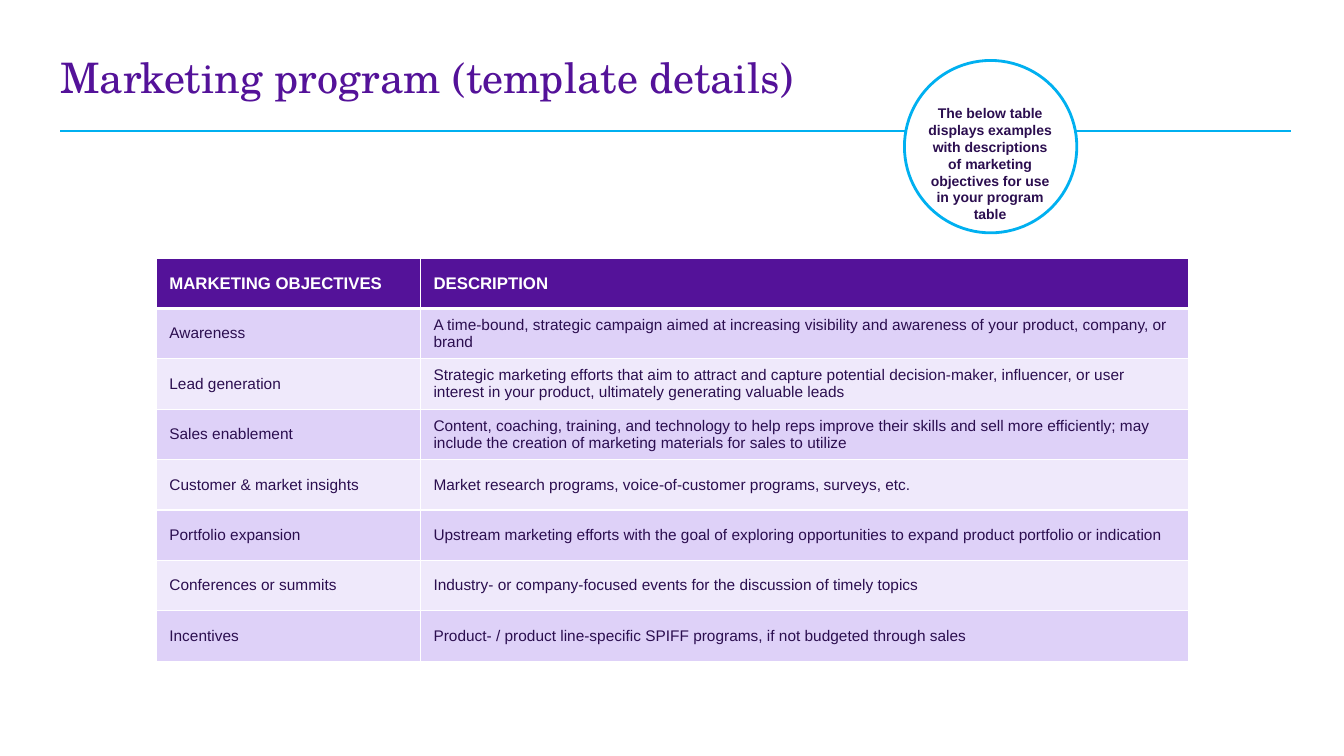
from lxml import etree
from pptx import Presentation
from pptx.dml.color import RGBColor
from pptx.enum.shapes import MSO_CONNECTOR, MSO_SHAPE
from pptx.enum.text import MSO_ANCHOR, PP_ALIGN
from pptx.oxml.ns import qn
from pptx.util import Inches, Pt

STRAIGHT = MSO_CONNECTOR.STRAIGHT
OVAL = MSO_SHAPE.OVAL
TOP, MIDDLE = MSO_ANCHOR.TOP, MSO_ANCHOR.MIDDLE
LEFT, CENTER = PP_ALIGN.LEFT, PP_ALIGN.CENTER

COLORS = {
    "purple": "541299",
    "ink": "2B0E4F",
    "cyan": "00B0F0",
    "band_dark": "DED1F8",
    "band_light": "EFE9FB",
    "white": "FFFFFF",
}
OBJECTIVES = [
    ("MARKETING OBJECTIVES", "DESCRIPTION"),
    ("Awareness",
     "A time-bound, strategic campaign aimed at increasing visibility and "
     "awareness of your product, company, or brand"),
    ("Lead generation",
     "Strategic marketing efforts that aim to attract and capture potential "
     "decision-maker, influencer, or user interest in your product, "
     "ultimately generating valuable leads"),
    ("Sales enablement",
     "Content, coaching, training, and technology to help reps improve their "
     "skills and sell more efficiently; may include the creation of "
     "marketing materials for sales to utilize"),
    ("Customer & market insights",
     "Market research programs, voice-of-customer programs, surveys, etc."),
    ("Portfolio expansion",
     "Upstream marketing efforts with the goal of exploring opportunities to "
     "expand product portfolio or indication"),
    ("Conferences or summits",
     "Industry- or company-focused events for the discussion of timely topics"),
    ("Incentives",
     "Product- / product line-specific SPIFF programs, if not budgeted "
     "through sales"),
]


def rgb(name):
    return RGBColor.from_string(COLORS[name])


class SlideBuilder:
    heading_font = "TeX Gyre Schola"
    body_font = "Arial"

    def __init__(self, slide):
        self.slide = slide

    def style_text(self, frame, size, color, font=body_font, bold=False,
                   align=LEFT, spacing=1.0):
        for paragraph in frame.paragraphs:
            paragraph.alignment = align
            paragraph.line_spacing = spacing
            for run in paragraph.runs:
                run.font.name = font
                run.font.size = Pt(size)
                run.font.bold = bold
                run.font.color.rgb = rgb(color)

    def text(self, box, words, size, color, anchor=TOP, **style):
        frame = self.slide.shapes.add_textbox(*map(Inches, box)).text_frame
        frame.word_wrap = True
        frame.vertical_anchor = anchor
        frame.text = words
        self.style_text(frame, size, color, **style)

    def rule(self, start, end, color, width):
        rule = self.slide.shapes.add_connector(
            STRAIGHT, *map(Inches, start + end))
        rule.line.color.rgb = rgb(color)
        rule.line.width = Pt(width)
        etree.SubElement(rule._element.spPr, qn("a:effectLst"))

    def circle(self, left, top, diameter, fill, line, width):
        circle = self.slide.shapes.add_shape(
            OVAL, *map(Inches, (left, top, diameter, diameter)))
        circle.shadow.inherit = False
        circle.fill.solid()
        circle.fill.fore_color.rgb = rgb(fill)
        circle.line.color.rgb = rgb(line)
        circle.line.width = Pt(width)

    def cell_borders(self, cell, color, widths):
        properties = cell._tc.get_or_add_tcPr()
        for side, width in widths.items():
            border = etree.SubElement(properties, qn(f"a:ln{side}"),
                                      w=str(Pt(width)))
            fill = etree.SubElement(border, qn("a:solidFill"))
            etree.SubElement(fill, qn("a:srgbClr"), val=COLORS[color])

    def table(self, left, top, column_widths, row_height, rows):
        table = self.slide.shapes.add_table(
            len(rows), len(column_widths), Inches(left), Inches(top),
            Inches(sum(column_widths)), Inches(row_height * len(rows))).table
        for column, width in zip(table.columns, column_widths):
            column.width = Inches(width)
        for r, row in enumerate(rows):
            table.rows[r].height = Inches(row_height)
            header = r == 0
            band = "band_dark" if r % 2 else "band_light"
            for c, words in enumerate(row):
                cell = table.cell(r, c)
                cell.text = words
                cell.vertical_anchor = MIDDLE
                cell.margin_left = Inches(0.13)
                # The line under the header is heavier
                self.cell_borders(cell, "white", {
                    "L": 1, "R": 1, "T": 3 if r == 1 else 1,
                    "B": 3 if header else 1})
                cell.fill.solid()
                cell.fill.fore_color.rgb = rgb("purple" if header else band)
                self.style_text(cell.text_frame, 12 if header else 11,
                                "white" if header else "ink", bold=header)


def main():
    deck = Presentation()
    deck.slide_width, deck.slide_height = Inches(13.33), Inches(7.5)
    page = SlideBuilder(deck.slides.add_slide(deck.slide_layouts[6]))

    # Objectives table
    page.table(1.55, 2.56, (2.62, 7.62), 0.5, OBJECTIVES)

    # Title and rule
    page.text((0.5, 0.36, 10.34, 0.87), "Marketing program (template details)",
              30, "purple", anchor=MIDDLE, font=page.heading_font, spacing=0.9)
    page.rule((0.6, 1.3), (12.8, 1.3), "cyan", 1.5)

    # Round callout
    page.circle(8.97, 0.6, 1.71, "white", "cyan", 2)
    page.text((9.07, 0.99, 1.5, 1.28),
              "The below table displays examples with descriptions of "
              "marketing objectives for use in your program table",
              10, "ink", bold=True, align=CENTER)

    deck.save("out.pptx")


if __name__ == "__main__":
    main()
